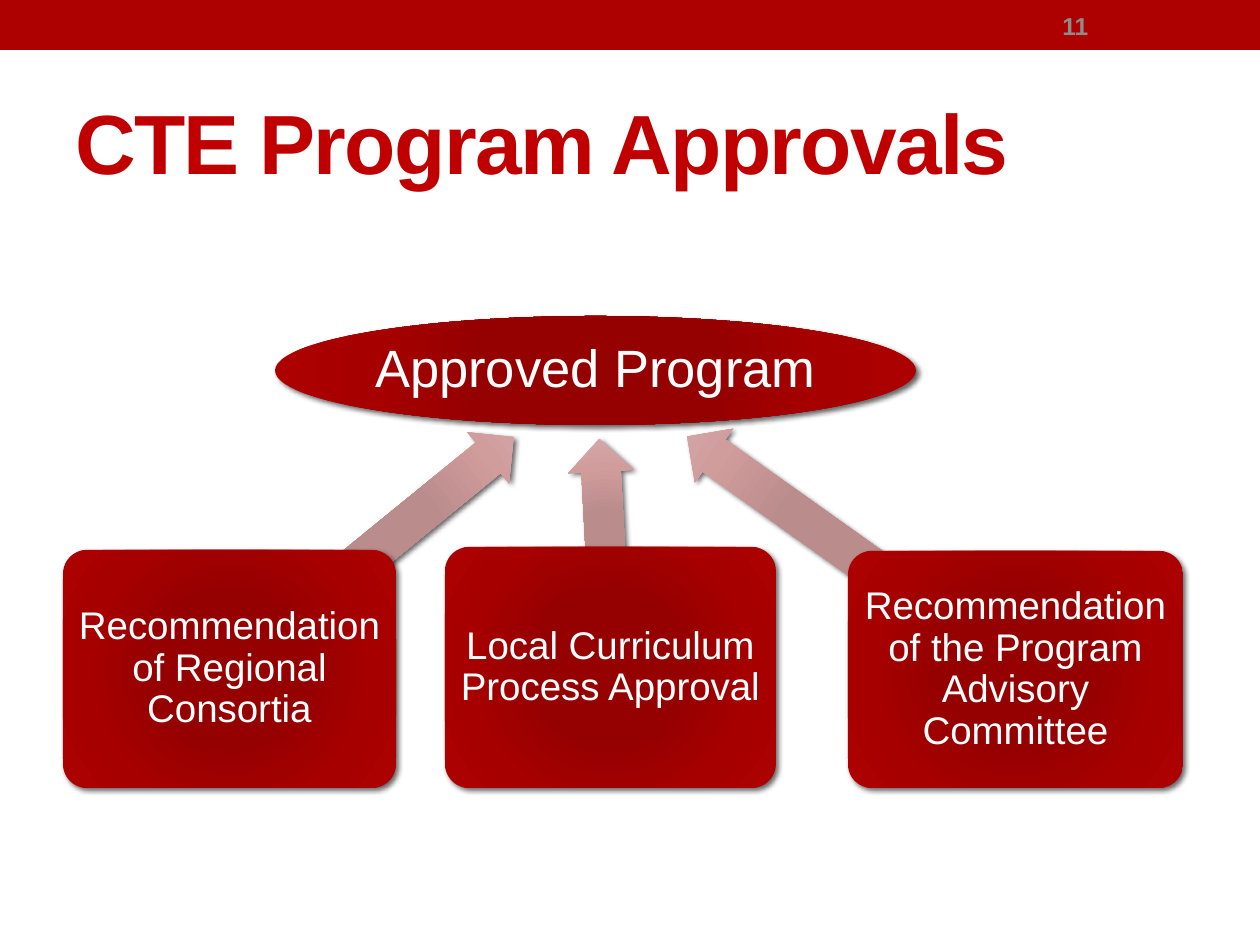
from lxml import etree
from pptx import Presentation, util as u
from pptx.dml.color import RGBColor
from pptx.enum import shapes, text
from pptx.oxml import ns

PX = 914400 // 126
HEX = dict(bar="AD0101", title="C00000", page="8C8C8C", white="FFFFFF")
STOPS = (0, 34, 70, 100)
RED = ("950000", "950000", "A60000", "AD0101")
PINK = ("BD8A8A", "BB8C8C", "D19C9C", "D3ABAB")

GOAL = ("Approved Program", (275, 316, 641, 109))
# Box text, left, top, width; arrow centre x, length, turn in degrees
STEPS = [
    ("Recommendation of Regional Consortia", 63, 550, 333, 371, 367, 140.8),
    ("Local Curriculum Process Approval", 445, 547, 331, 605, 229, 86.9),
    ("Recommendation of the Program Advisory Committee", 848, 551, 335, 851, 402, 35.4),
]
BASE = 788          # common bottom edge of the boxes
ARROW_Y, THICK = 553, 66

Kind = shapes.MSO_SHAPE
deck = Presentation()
deck.slide_width, deck.slide_height = 1260 * PX, 945 * PX
slide = deck.slides.add_slide(deck.slide_layouts[6])


def emu(box):
    return [n * PX for n in box]


def write(shape, words, size, color, align, bold=False, inset=None):
    frame = shape.text_frame
    frame.word_wrap = True
    frame.vertical_anchor = text.MSO_ANCHOR.MIDDLE
    if inset is not None:
        frame.margin_left = frame.margin_right = inset * PX
        frame.margin_top = frame.margin_bottom = inset * PX
    para = frame.paragraphs[0]
    para.alignment = align
    run = para.add_run()
    run.text = words
    font = run.font
    font.name, font.size, font.bold = "Arial", u.Pt(size), bold
    font.color.rgb = RGBColor.from_string(HEX[color])
    return para, run


def label(words, box, size, color):
    """Add bold, left-aligned text on its own."""
    item = slide.shapes.add_textbox(*emu(box))
    return write(item, words, size, color, text.PP_ALIGN.LEFT, bold=True)[1]


def glow(kind, box, colors):
    """Add a shape with a round gradient and a soft drop shadow."""
    shape = slide.shapes.add_shape(kind, *emu(box))
    shape.line.fill.background()
    stops = "".join(f'<a:gs pos="{at * 1000}"><a:srgbClr val="{c}"/></a:gs>'
                    for at, c in zip(STOPS, colors))
    fill = etree.fromstring(
        f'<a:gradFill {ns.nsdecls("a")} rotWithShape="1"><a:gsLst>{stops}</a:gsLst>'
        '<a:path path="circle"><a:fillToRect l="50000" t="50000" r="50000" b="50000"/>'
        '</a:path></a:gradFill>')
    shade = etree.fromstring(
        f'<a:effectLst {ns.nsdecls("a")}><a:outerShdw blurRad="{u.Pt(3)}" '
        f'dist="{u.Pt(2)}" dir="{45 * 60000}" rotWithShape="0"><a:srgbClr val="000000">'
        '<a:alpha val="60000"/></a:srgbClr></a:outerShdw></a:effectLst>')
    props = shape.element.spPr
    props.find(ns.qn("a:ln")).addprevious(fill)
    props.append(shade)
    return shape


def node(kind, words, box, size, inset):
    shape = glow(kind, box, RED)
    para, _ = write(shape, words, size, "white", text.PP_ALIGN.CENTER, inset=inset)
    para.line_spacing = 0.9
    return shape


bar = slide.shapes.add_shape(Kind.RECTANGLE, *emu((0, 0, 1260, 50)))
bar.shadow.inherit = False
bar.fill.solid()
bar.fill.fore_color.rgb = RGBColor.from_string(HEX["bar"])
bar.line.fill.background()

title = label("CTE Program Approvals", (63, 73, 1134, 136), 48, "title")
title.font._element.set("spc", "-100")

node(Kind.OVAL, *GOAL, size=30, inset=2)
for words, left, top, width, mid, length, turn in STEPS:
    arrow = glow(Kind.LEFT_ARROW,
                 (mid - length // 2, ARROW_Y - THICK // 2, length, THICK), PINK)
    arrow.adjustments[0], arrow.adjustments[1] = 0.6, 0.5
    arrow.rotation = turn
    card = node(Kind.ROUNDED_RECTANGLE, words, (left, top, width, BASE - top), 22, 6)
    card.adjustments[0] = 0.1

label("11", (1050, 3, 147, 45), 14, "page")
deck.save("out.pptx")
